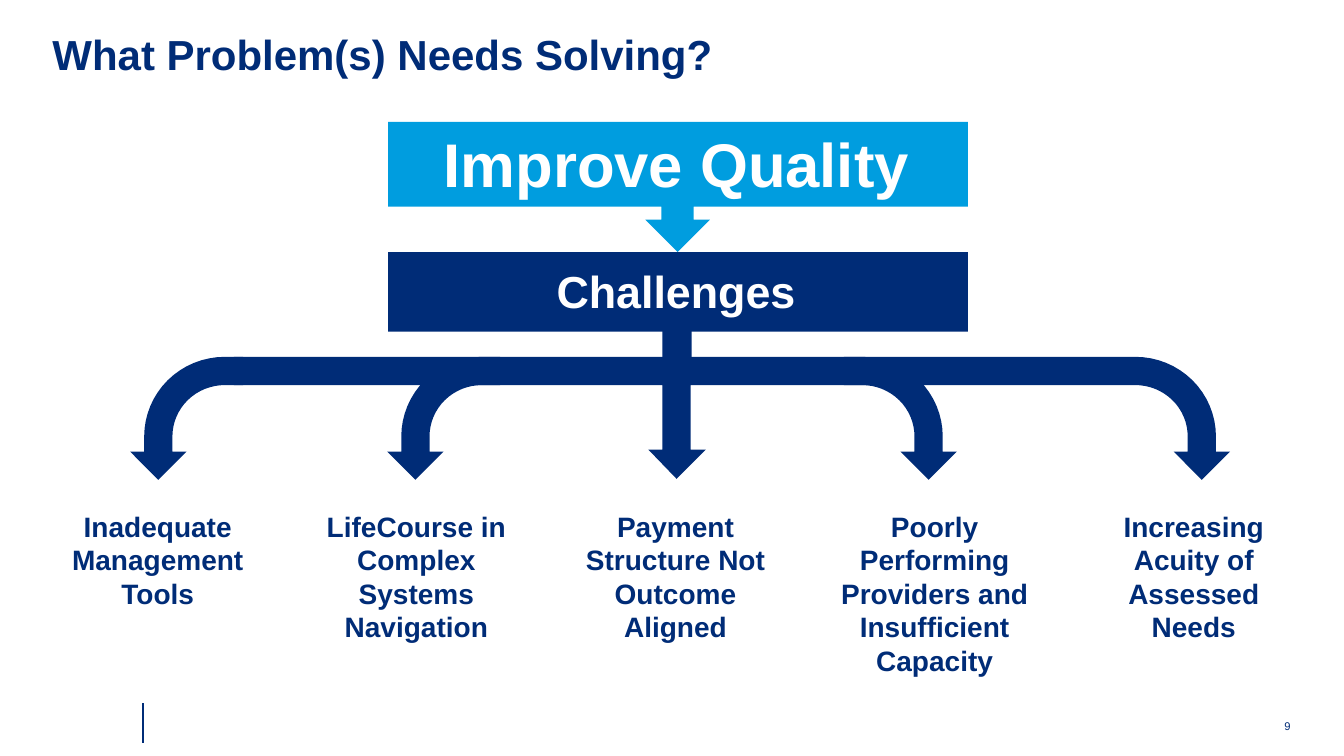
"""Build the slide that breaks Improve Quality down into five challenges."""
from dataclasses import dataclass
from math import cos, pi, sin

from lxml.etree import SubElement
from pptx import Presentation
from pptx.dml.color import RGBColor
from pptx.enum.shapes import MSO_CONNECTOR, MSO_SHAPE
from pptx.enum.text import MSO_ANCHOR, MSO_AUTO_SIZE, PP_ALIGN
from pptx.oxml.ns import qn
from pptx.util import Inches, Pt

COLORS = {"navy": "002C77", "sky": "009DDF", "white": "FFFFFF"}
Point = tuple[float, float]
BAR_TOP, BAR_BOTTOM, BAR_LEFT = 3.54, 3.82, 2.32
HALF_SHAFT, HALF_HEAD = 0.14, 0.28
HEAD_Y, TIP_Y = 4.48, 4.76
ARC_Y, ARC_OFFSET, TAIL = 4.33, 0.66, 0.84
ARC_STEPS = 16


@dataclass
class Label:
    text: str
    left: float
    top: float
    width: float
    height: float
    size: float = 20
    color: str = "navy"
    align: PP_ALIGN = PP_ALIGN.CENTER
    bold: bool = True
    inset: float = 0


HEADING = Label("What Problem(s) Needs Solving?", 0.52, 0.26, 6.58, 0.53, 30, align=PP_ALIGN.LEFT)
GOAL = Label("Improve Quality", 4.4, 1.23, 4.65, 0.76, 44, "white", PP_ALIGN.LEFT)
LABELS = [
    Label("Challenges", 5.52, 2.6, 2.4, 0.56, 32, "white", PP_ALIGN.LEFT),
    Label("Inadequate Management Tools", 0.7, 5.03, 1.73, 1.03),
    Label("LifeCourse in Complex Systems Navigation", 3.23, 5.03, 1.8, 1.36),
    Label("Payment Structure Not Outcome Aligned", 5.8, 5.03, 1.8, 1.36),
    Label("Poorly Performing Providers and Insufficient Capacity", 8.33, 5.03, 1.88, 1.7),
    Label("Increasing Acuity of Assessed Needs", 11.13, 5.03, 1.42, 1.36),
    Label("9", 12.64, 7.12, 0.22, 0.15, 8, align=PP_ALIGN.LEFT, bold=False, inset=0.1),
]


def rgb(name: str) -> RGBColor:
    return RGBColor.from_string(COLORS[name])


def paint(sp, color: str) -> None:
    sp.shadow.inherit = False
    sp.fill.solid()
    sp.fill.fore_color.rgb = rgb(color)
    sp.line.fill.background()


def add_outline(s, points: list[Point], color: str) -> None:
    start, *rest = [(Inches(x), Inches(y)) for x, y in points]
    builder = s.shapes.build_freeform(*start, scale=1.0)
    builder.add_line_segments(rest, close=True)
    paint(builder.convert_to_shape(), color)


def add_box(s, left: float, top: float, width: float, height: float, color: str) -> None:
    sp = s.shapes.add_shape(
        MSO_SHAPE.RECTANGLE, Inches(left), Inches(top), Inches(width), Inches(height))
    paint(sp, color)


def write(sp, label: Label) -> None:
    sp.left, sp.top = Inches(label.left), Inches(label.top)
    sp.width, sp.height = Inches(label.width), Inches(label.height)
    tf = sp.text_frame
    tf.text = label.text
    tf.word_wrap = True
    tf.auto_size = MSO_AUTO_SIZE.NONE
    tf.vertical_anchor = MSO_ANCHOR.TOP
    tf.margin_left = Inches(label.inset)
    tf.margin_top = Inches(0.02)
    tf.margin_right = tf.margin_bottom = 0
    p = tf.paragraphs[0]
    p.alignment = label.align
    font = p.runs[0].font
    font.name, font.size, font.bold = "Arial", Pt(label.size), label.bold
    font.color.rgb = rgb(label.color)


def add_label(s, label: Label) -> None:
    write(s.shapes.add_textbox(0, 0, 0, 0), label)


def bend(tip: float, side: int) -> list[Point]:
    """Outline an arrow that leaves the bar and turns down, to the left (-1) or right (1)."""
    def arc(radius: float, edge: float) -> list[Point]:
        angles = [i * pi / 2 / ARC_STEPS for i in range(ARC_STEPS + 1)]
        return [(tip + side * (radius * sin(a) - ARC_OFFSET),
                 ARC_Y - (ARC_Y - edge) * cos(a)) for a in angles]

    tail = tip - side * TAIL
    head = [(tip + side * HALF_SHAFT, HEAD_Y), (tip + side * HALF_HEAD, HEAD_Y), (tip, TIP_Y),
            (tip - side * HALF_HEAD, HEAD_Y), (tip - side * HALF_SHAFT, HEAD_Y)]
    outer = arc(ARC_OFFSET + HALF_SHAFT, BAR_TOP)
    inner = arc(ARC_OFFSET - HALF_SHAFT, BAR_BOTTOM)[::-1]
    return [(tail, BAR_TOP), *outer, *head, *inner, (tail, BAR_BOTTOM)]


def main() -> None:
    prs = Presentation()
    prs.slide_width, prs.slide_height = Inches(13.33), Inches(7.5)
    s = prs.slides.add_slide(prs.slide_layouts[5])

    add_box(s, 6.57, 2.8, 0.29, 0.9, "navy")
    for tip, side in ((1.57, -1), (4.12, -1), (9.21, 1)):
        add_outline(s, bend(tip, side), "navy")
    middle = [(6.85, BAR_BOTTOM), (6.85, 4.46), (7, 4.46), (6.71, 4.75),
              (6.43, 4.46), (6.57, 4.46), (6.57, BAR_BOTTOM)]
    bar_end = [(BAR_LEFT, BAR_BOTTOM), (BAR_LEFT, BAR_TOP)]
    add_outline(s, bend(11.92, 1) + middle + bar_end, "navy")

    add_label(s, HEADING)
    add_outline(s, [(9.6, 1.21), (3.85, 1.21), (3.85, 2.05), (6.56, 2.05), (6.56, 2.18),
                    (6.4, 2.18), (6.72, 2.5), (7.04, 2.18), (6.88, 2.18), (6.88, 2.05),
                    (9.6, 2.05)], "sky")
    title = s.shapes.title
    title.element.getparent().append(title.element)
    write(title, GOAL)

    add_box(s, 3.85, 2.5, 5.75, 0.79, "navy")
    for label in LABELS:
        add_label(s, label)

    rule = s.shapes.add_connector(
        MSO_CONNECTOR.STRAIGHT, Inches(1.42), Inches(7.37), Inches(1.42), Inches(6.97))
    rule.line.color.rgb = rgb("navy")
    rule.line.width = Pt(1)
    SubElement(rule.element.spPr, qn("a:effectLst"))
    prs.save("out.pptx")


if __name__ == "__main__":
    main()
